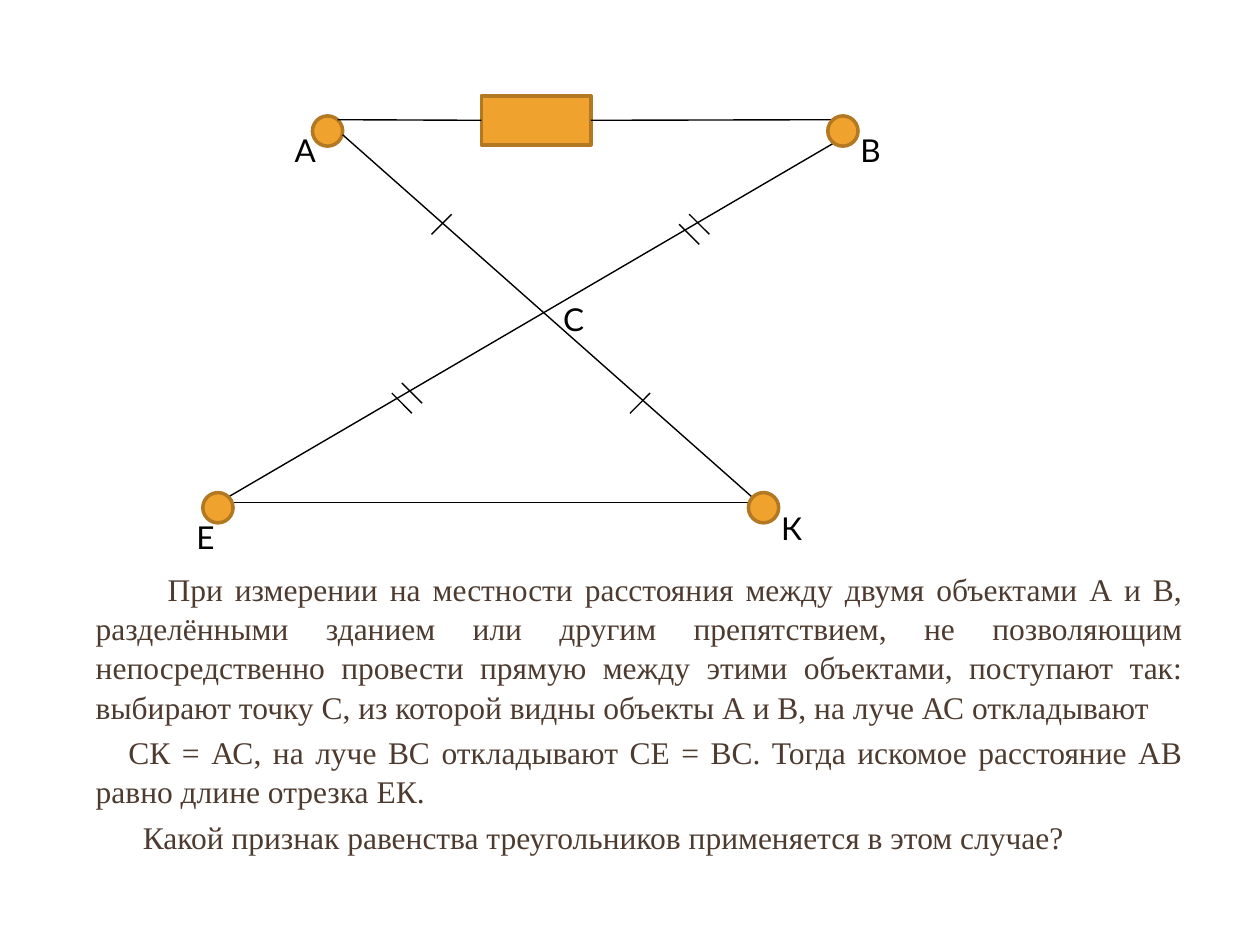
import dataclasses

import lxml.etree
import pptx
import pptx.dml.color
import pptx.enum.shapes
import pptx.enum.text
import pptx.oxml.ns
import pptx.util


@dataclasses.dataclass(frozen=True)
class Theme:
    """Colours, fonts and sizes of the slide."""
    fill: str = "F0A22E"
    outline: str = "B27822"
    ink: str = "000000"
    body: str = "4E3B30"
    label_font: str = "Lato"
    body_font: str = "Times New Roman"
    text_size: float = 18
    outline_width: float = 2
    line_width: float = 0.79


THEME = Theme()
WIDTH, HEIGHT = pptx.util.Inches(10), pptx.util.Inches(7.5)
COLUMNS, ROWS = 100, 75
POINT_SIZE = 2.4
TICK_HALF = 0.8
TICK_SHIFT = 0.4
ALIGN = pptx.enum.text.PP_ALIGN

POINTS = {"А": (24.8, 9.2), "В": (65.7, 9.2), "К": (59.4, 39.1), "Е": (16.1, 39.1)}
LABELS = {"А": (22.4, 9.9), "В": (67.3, 9.9), "Е": (14.6, 40.6), "К": (61, 39.9), "С": (43.7, 23.3)}
SEGMENTS = [
    ((27.2, 10.7), (60.2, 39.9)),
    ((67.3, 10.7), (18.2, 39.4)),
    ((59.4, 39.9), (18.5, 39.9)),
]
SINGLE_TICKS = [(35.05, 17.8), (50.8, 32)]
DOUBLE_TICKS = [(55.1, 18.2), (32.3, 31.6)]
PARAGRAPHS = [
    ("При измерении на местности расстояния между двумя объектами А и В, разделёнными "
     "зданием или другим препятствием, не позволяющим непосредственно провести прямую "
     "между этими объектами, поступают так: выбирают точку С, из которой видны объекты "
     "А и В, на луче АС откладывают", ALIGN.JUSTIFY, 5.7, 0),
    ("СК = АС, на луче ВС откладывают СЕ = ВС. Тогда искомое расстояние АВ равно длине "
     "отрезка ЕК.", ALIGN.JUSTIFY, 2.6, 0),
    ("Какой признак равенства треугольников применяется в этом случае?", ALIGN.CENTER, -3.8, 1.9),
]


def across(columns):
    """Convert grid columns to a length."""
    return pptx.util.Emu(round(WIDTH * columns / COLUMNS))


def down(rows):
    """Convert grid rows to a length."""
    return pptx.util.Emu(round(HEIGHT * rows / ROWS))


def box(left, top, width, height):
    """Convert a grid box to lengths."""
    return across(left), down(top), across(width), down(height)


def color(code):
    """Convert a colour code to a colour."""
    return pptx.dml.color.RGBColor.from_string(code)


def add_run(paragraph, text, font_name, code):
    """Add a formatted run to a paragraph."""
    run = paragraph.add_run()
    run.text = text
    run.font.name = font_name
    run.font.size = pptx.util.Pt(THEME.text_size)
    run.font.color.rgb = color(code)


def add_solid(slide, kind, area):
    """Add a filled and outlined preset shape."""
    shape = slide.shapes.add_shape(kind, *box(*area))
    shape.shadow.inherit = False
    shape.fill.solid()
    shape.fill.fore_color.rgb = color(THEME.fill)
    shape.line.color.rgb = color(THEME.outline)
    shape.line.width = pptx.util.Pt(THEME.outline_width)
    return shape


def add_point(slide, name):
    """Add the round marker of a named point."""
    add_solid(slide, pptx.enum.shapes.MSO_SHAPE.OVAL, (*POINTS[name], POINT_SIZE, POINT_SIZE))


def add_line(slide, start, end):
    """Add a thin straight line without shadow."""
    connector = slide.shapes.add_connector(
        pptx.enum.shapes.MSO_CONNECTOR.STRAIGHT,
        across(start[0]), down(start[1]), across(end[0]), down(end[1]))
    connector.line.color.rgb = color(THEME.ink)
    connector.line.width = pptx.util.Pt(THEME.line_width)
    properties = connector._element.spPr
    lxml.etree.SubElement(properties, pptx.oxml.ns.qn("a:effectLst"))
    return connector


def add_tick(slide, column, row, rise):
    """Add a diagonal equality tick around its centre."""
    add_line(slide, (column - TICK_HALF, row + rise * TICK_HALF),
             (column + TICK_HALF, row - rise * TICK_HALF))


def add_label(slide, text, position):
    """Add the letter of a point."""
    label = slide.shapes.add_textbox(*box(*position, 3.5, 4))
    label.text_frame.word_wrap = False
    label.text_frame.auto_size = pptx.enum.text.MSO_AUTO_SIZE.SHAPE_TO_FIT_TEXT
    add_run(label.text_frame.paragraphs[0], text, THEME.label_font, THEME.ink)


def add_obstacle(slide):
    """Add the building and the two parts of line AB."""
    building = add_solid(slide, pptx.enum.shapes.MSO_SHAPE.RECTANGLE, (38.2, 7.6, 8.7, 3.9))
    add_line(slide, (26.8, 9.5), (38.2, 9.5)).end_connect(building, 1)
    add_line(slide, (46.9, 9.5), (66.1, 9.5)).begin_connect(building, 3)


def fill_body(body):
    """Place the body placeholder and write its paragraphs."""
    body.left, body.top, body.width, body.height = box(2.8, 44.6, 92.1, 22.8)
    frame = body.text_frame
    frame.word_wrap = True
    frame.auto_size = pptx.enum.text.MSO_AUTO_SIZE.NONE
    for index, (text, alignment, indent, right) in enumerate(PARAGRAPHS):
        paragraph = frame.add_paragraph() if index else frame.paragraphs[0]
        paragraph.alignment = alignment
        paragraph.line_spacing = 1.04
        paragraph.space_before = pptx.util.Pt(THEME.text_size * 0.2)
        properties = paragraph._p.get_or_add_pPr()
        for name, columns in (("marL", 3.8), ("marR", right), ("indent", indent)):
            properties.set(name, str(int(across(columns))))
        lxml.etree.SubElement(properties, pptx.oxml.ns.qn("a:buNone"))
        add_run(paragraph, text, THEME.body_font, THEME.body)


def main():
    """Build and save the slide."""
    presentation = pptx.Presentation()
    presentation.slide_width, presentation.slide_height = WIDTH, HEIGHT
    slide = presentation.slides.add_slide(presentation.slide_layouts[1])
    title = slide.shapes.title._element
    title.getparent().remove(title)

    add_point(slide, "А")
    add_obstacle(slide)
    for start, end in SEGMENTS:
        add_line(slide, start, end)
    for name in ("В", "К", "Е"):
        add_point(slide, name)
    for text, position in LABELS.items():
        add_label(slide, text, position)
    for column, row in SINGLE_TICKS:
        add_tick(slide, column, row, 1)
    for column, row in DOUBLE_TICKS:
        for shift in (-TICK_SHIFT, TICK_SHIFT):
            add_tick(slide, column + shift, row - shift, -1)
    fill_body(slide.placeholders[1])
    presentation.save("out.pptx")


if __name__ == "__main__":
    main()
